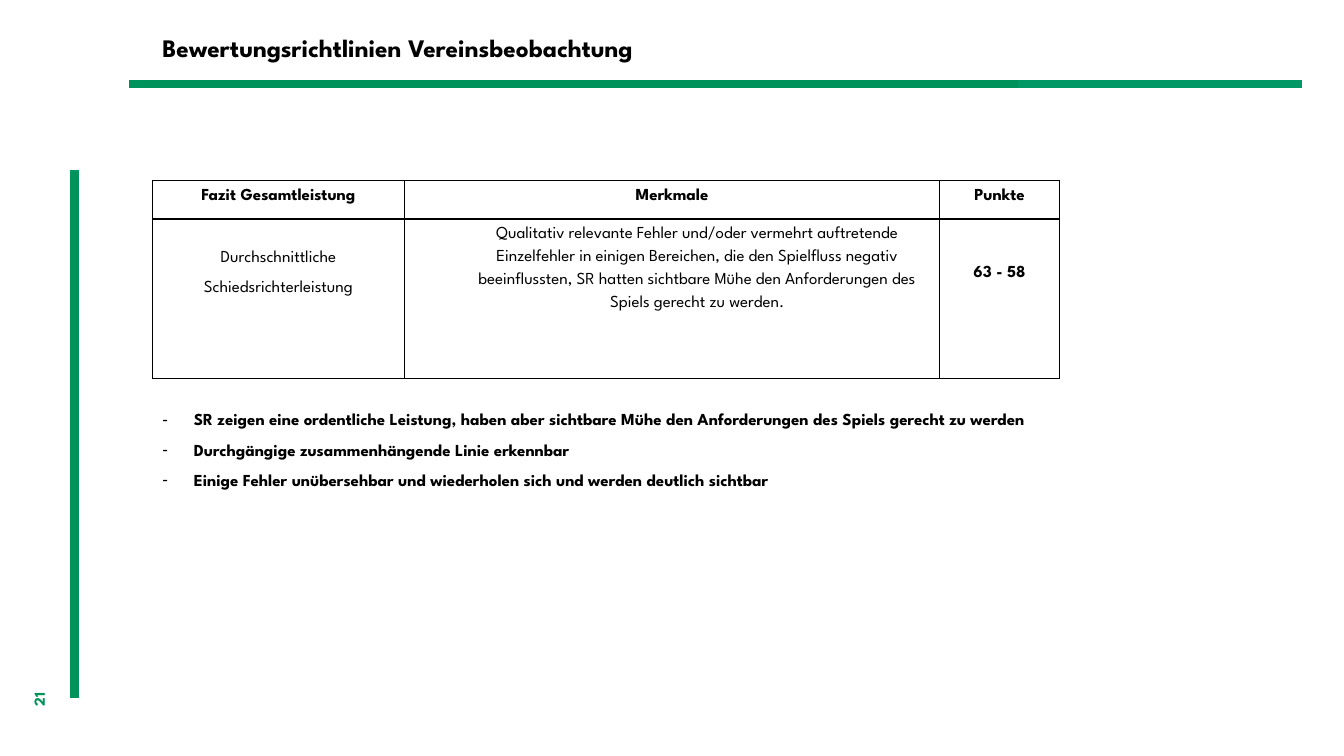
from lxml import etree
from pptx import Presentation
from pptx.dml.color import RGBColor
from pptx.enum.shapes import MSO_CONNECTOR
from pptx.enum.text import MSO_ANCHOR, MSO_AUTO_SIZE, PP_ALIGN
from pptx.oxml.ns import qn
from pptx.util import Cm, Pt

STRAIGHT = MSO_CONNECTOR.STRAIGHT
TOP, MIDDLE = MSO_ANCHOR.TOP, MSO_ANCHOR.MIDDLE
LEFT, CENTER = PP_ALIGN.LEFT, PP_ALIGN.CENTER
NO_AUTOSIZE = MSO_AUTO_SIZE.NONE

FONT = "League Spartan"
BLACK, GREEN, LIGHT_GREEN = "000000", "00925B", "019865"

HEADINGS = ["Fazit Gesamtleistung", "Merkmale", "Punkte"]
RATING = ["Durchschnittliche", "Schiedsrichterleistung"]
CRITERIA = ["Qualitativ relevante Fehler und/oder vermehrt auftretende "
            "Einzelfehler in einigen Bereichen, die den Spielfluss negativ "
            "beeinflussten, SR hatten sichtbare Mühe den Anforderungen des "
            "Spiels gerecht zu werden."]
POINTS = ["63 - 58"]
REMARKS = [
    "SR zeigen eine ordentliche Leistung, haben aber sichtbare Mühe den "
    "Anforderungen des Spiels gerecht zu werden",
    "Durchgängige zusammenhängende Linie erkennbar",
    "Einige Fehler unübersehbar und wiederholen sich und werden deutlich sichtbar",
]


def color(hex_code):
    return RGBColor.from_string(hex_code)


def style(paragraph, size, bold=True, hex_code=BLACK, align=LEFT, spacing=1.0):
    paragraph.alignment = align
    paragraph.line_spacing = spacing
    paragraph.space_before = Pt(0)
    font = paragraph.font
    font.name, font.size, font.bold = FONT, Pt(size), bold
    font.color.rgb = color(hex_code)


def place(shape, left, top, width, height):
    shape.left, shape.top = Cm(left), Cm(top)
    shape.width, shape.height = Cm(width), Cm(height)


def add_rule(slide, x1, y1, x2, y2, hex_code):
    rule = slide.shapes.add_connector(STRAIGHT, Cm(x1), Cm(y1), Cm(x2), Cm(y2))
    rule.line.color.rgb = color(hex_code)
    rule.line.width = Pt(6)
    etree.SubElement(rule._element.spPr, qn("a:effectLst"))


def add_frame(slide, side_x, top_y):
    # Green side bar and title underline, each in two overlapping shades
    add_rule(slide, side_x, 4.29, side_x, 17.53, LIGHT_GREEN)
    add_rule(slide, 32.82, top_y, 3.25, top_y, LIGHT_GREEN)
    add_rule(slide, side_x, 4.34, side_x, 17.6, GREEN)
    add_rule(slide, 25.65, top_y, 3.25, top_y, GREEN)


def add_page_number(slide, left, top, width, height):
    number = slide.shapes.add_textbox(Cm(left), Cm(top), Cm(width), Cm(height))
    number.rotation = 270
    number.text_frame.word_wrap = True
    number.text_frame.text = "21"
    style(number.text_frame.paragraphs[0], 11, hex_code=GREEN)


def fill_title(slide, left, top, width, height):
    title = slide.shapes.title
    place(title, left, top, width, height)
    frame = title.text_frame
    frame.text = "Bewertungsrichtlinien Vereinsbeobachtung"
    frame.vertical_anchor = MIDDLE
    frame.auto_size = NO_AUTOSIZE
    style(frame.paragraphs[0], 18, spacing=0.9)


def border(cell):
    properties = cell._tc.get_or_add_tcPr()
    for index, side in enumerate(("lnL", "lnR", "lnT", "lnB")):
        line = etree.Element(qn(f"a:{side}"), w=str(Pt(1)))
        fill = etree.SubElement(line, qn("a:solidFill"))
        etree.SubElement(fill, qn("a:srgbClr"), val=BLACK)
        properties.insert(index, line)


def fill_cell(cell, lines, bold, spacing, top=0.0, indent=0.0):
    cell.fill.background()
    border(cell)
    cell.vertical_anchor = TOP
    cell.margin_left = cell.margin_right = Cm(0.18)
    cell.margin_top, cell.margin_bottom = Cm(top), Cm(0)
    cell.text_frame.text = "\n".join(lines)
    for paragraph in cell.text_frame.paragraphs:
        if indent:
            paragraph._p.get_or_add_pPr().set("marL", str(Cm(indent)))
        style(paragraph, 12, bold, align=CENTER, spacing=spacing)
        paragraph.space_after = Pt(10)


def add_rating_table(slide, left, top, width, height):
    table = slide.shapes.add_table(
        2, 3, Cm(left), Cm(top), Cm(width), Cm(height)).table
    table.first_row = table.horz_banding = False
    for column, share in zip(table.columns, (0.278, 0.59, 0.132)):
        column.width = Cm(width * share)
    header_height = 0.97
    table.rows[0].height = Cm(header_height)
    table.rows[1].height = Cm(height - header_height)
    # Header row
    for column, heading in enumerate(HEADINGS):
        fill_cell(table.cell(0, column), [heading], True, 1.5)
    # Rating row
    fill_cell(table.cell(1, 0), RATING, False, 1.0, top=0.8)
    fill_cell(table.cell(1, 1), CRITERIA, False, 1.5, indent=1.27)
    fill_cell(table.cell(1, 2), POINTS, True, 2.0, top=0.8)


def fill_remarks(slide, left, top, width, height):
    remarks = slide.placeholders[1]
    place(remarks, left, top, width, height)
    frame = remarks.text_frame
    frame.text = "\n".join(REMARKS)
    frame.vertical_anchor = TOP
    frame.auto_size = NO_AUTOSIZE
    for paragraph in frame.paragraphs:
        properties = paragraph._p.get_or_add_pPr()
        properties.set("marL", str(Cm(0.79)))
        properties.set("indent", str(-Cm(0.79)))
        etree.SubElement(properties, qn("a:buFont"), typeface="Arial")
        etree.SubElement(properties, qn("a:buChar"), char="-")
        style(paragraph, 12, spacing=1.5)


def main():
    presentation = Presentation()
    presentation.slide_width, presentation.slide_height = Cm(33.87), Cm(19.05)
    slide = presentation.slides.add_slide(presentation.slide_layouts[1])
    content_left = 3.84
    add_frame(slide, 1.88, 2.11)
    add_page_number(slide, 0.51, 16.92, 1.24, 1.02)
    fill_remarks(slide, content_left, 9.93, 25.55, 4.88)
    fill_title(slide, content_left, 0.76, 22, 0.99)
    add_rating_table(slide, content_left, 4.55, 22.86, 4.98)
    presentation.save("out.pptx")


if __name__ == "__main__":
    main()
